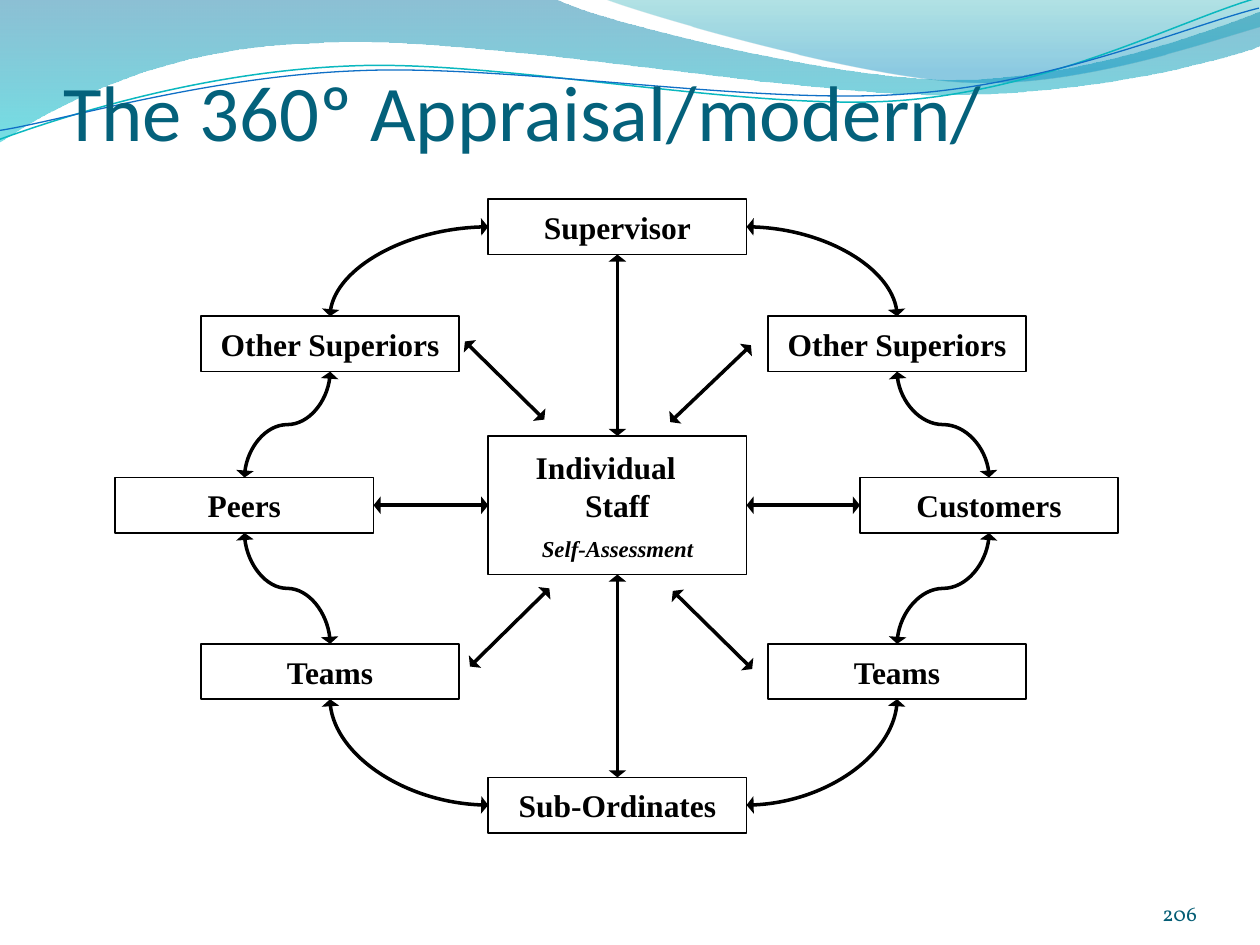
import pptx
import pptx.dml.color
import pptx.enum.shapes
import pptx.enum.text
import pptx.oxml
import pptx.oxml.ns
import pptx.util
from pptx.dml.color import RGBColor
from pptx.enum.shapes import MSO_CONNECTOR, MSO_SHAPE
from pptx.enum.text import MSO_ANCHOR, MSO_AUTO_SIZE, PP_ALIGN
from pptx.util import Inches, Pt

BLACK = RGBColor(0x00, 0x00, 0x00)
TITLE_TEAL = RGBColor(0x04, 0x61, 0x7B)
NUMBER_TEAL = RGBColor(0x04, 0x5D, 0x75)
WAVE_BLUE = RGBColor(0x00, 0x74, 0xA1)
WAVE_CYAN = RGBColor(0x00, 0xC6, 0xCF)
CREST_GREEN = RGBColor(0x00, 0xA1, 0xA9)
CREST_BLUE = RGBColor(0x00, 0x8B, 0xBF)
LINE_CYAN = RGBColor(0x0A, 0xB8, 0xBF)
LINE_BLUE = RGBColor(0x0F, 0x6F, 0xC6)

BOX_WIDTH, BOX_HEIGHT = 2.05, 0.44
CENTER_X, CENTER_Y = 4.9, 4.01
CORE_HEIGHT = 1.1
LEFT_X, RIGHT_X = 2.62, 7.12
PEERS_X, CUSTOMERS_X = 1.94, 7.85
TOP_Y, UPPER_Y, LOWER_Y, BOTTOM_Y = 1.8, 2.73, 5.33, 6.39
WAVE_TILT = 357.3


def make_element(tag, attributes=""):
    return pptx.oxml.parse_xml(f'<{tag} {pptx.oxml.ns.nsdecls("a")} {attributes}/>')


def add_outline(page, start, segments, closed):
    builder = page.shapes.build_freeform(Inches(start[0]), Inches(start[1]))
    points = [(Inches(x), Inches(y)) for segment in segments for x, y in segment]
    builder.add_line_segments(points, close=closed)
    shape = builder.convert_to_shape()
    shape.shadow.inherit = False
    steps = list(shape._element.iter(pptx.oxml.ns.qn("a:lnTo")))
    for segment in segments:
        used, steps = steps[:len(segment)], steps[len(segment):]
        if len(segment) == 3:
            curve = make_element("a:cubicBezTo")
            used[0].addprevious(curve)
            for step in used:
                curve.append(step[0])
                step.getparent().remove(step)
    return shape


def add_wave(page, start, segments, stops):
    shape = add_outline(page, start, segments, True)
    shape.line.fill.background()
    shape.fill.gradient()
    shape.fill.gradient_angle = 270
    for stop, (position, color, opacity) in zip(shape.fill.gradient_stops, stops):
        stop.position = position
        stop.color.rgb = color
        for tint in stop._gs.iter(pptx.oxml.ns.qn("a:srgbClr")):
            tint.append(make_element("a:alpha", f'val="{opacity * 1000}"'))


def add_wave_line(page, start, segments, color, width):
    shape = add_outline(page, start, segments, False)
    shape.rotation = WAVE_TILT
    shape.fill.background()
    shape.line.color.rgb = color
    shape.line.width = Pt(width)


def add_background(page):
    add_wave(page, (0, 0), [
        [(4.4, -0.01)],
        [(4.76, 0.17), (6.64, 0.63), (7.58, 0.63)],
        [(8.53, 0.63), (9.58, 0.26), (10, 0.09)],
        [(10.01, 0.36)],
        [(9.83, 0.44), (8.7, 0.76), (7.46, 0.75)],
        [(6.22, 0.75), (3.82, 0.28), (2.57, 0.34)],
        [(1.29, 0.36), (0.46, 0.83), (-0.01, 1.13)],
    ], [(0, WAVE_BLUE, 45), (1, WAVE_CYAN, 55)])
    add_wave(page, (4.79, -0.01), [
        [(5.09, 0.11), (6.82, 0.62), (7.69, 0.65)],
        [(8.56, 0.69), (9.61, 0.32), (10, 0.21)],
        [(10, 0)],
    ], [(0, CREST_GREEN, 30), (0.8, CREST_BLUE, 45)])
    add_wave_line(page, (-0.02, 0.87), [
        [(0.47, 0.72), (1.58, 0.41), (2.78, 0.42)],
        [(3.96, 0.42), (5.91, 0.93), (7.12, 0.9)],
        [(8.32, 0.87), (9.4, 0.36), (10, 0.22)],
    ], LINE_CYAN, 0.85)
    add_wave_line(page, (-0.02, 0.8), [
        [(0.46, 0.75), (1.64, 0.45), (2.83, 0.46)],
        [(4.04, 0.46), (5.96, 0.88), (7.16, 0.85)],
        [(8.35, 0.83), (9.42, 0.42), (10.01, 0.3)],
    ], LINE_BLUE, 0.75)


def format_text(para, font, size, color, align, bold=False, italic=False):
    para.alignment = align
    for span in para.runs:
        span.font.name = font
        span.font.size = Pt(size)
        span.font.color.rgb = color
        span.font.bold = bold
        span.font.italic = italic


def set_frame(frame, top_inset):
    frame.word_wrap = True
    frame.auto_size = MSO_AUTO_SIZE.NONE
    frame.vertical_anchor = MSO_ANCHOR.BOTTOM
    frame.margin_left = frame.margin_right = frame.margin_bottom = 0
    frame.margin_top = Inches(top_inset)


def add_title(page, text):
    title = page.shapes.title
    title.left, title.top = Inches(0.5), Inches(0.77)
    title.width, title.height = Inches(9.08), Inches(0.48)
    title.text_frame.text = text
    set_frame(title.text_frame, 0.05)
    format_text(title.text_frame.paragraphs[0], "Calibri", 45, TITLE_TEAL, PP_ALIGN.LEFT)
    page.shapes._spTree.append(title._element)


def add_page_number(page, text):
    box = page.shapes.add_textbox(Inches(8.67), Inches(6.95), Inches(0.83), Inches(0.4))
    box.text_frame.text = text
    set_frame(box.text_frame, 0)
    format_text(box.text_frame.paragraphs[0], "Vollkorn", 12, NUMBER_TEAL, PP_ALIGN.RIGHT)


def add_box(page, text, x, y, height=BOX_HEIGHT, note=None):
    box = page.shapes.add_shape(
        MSO_SHAPE.RECTANGLE, Inches(x - BOX_WIDTH / 2), Inches(y - height / 2),
        Inches(BOX_WIDTH), Inches(height))
    box.shadow.inherit = False
    box.fill.background()
    box.line.color.rgb = BLACK
    box.line.width = Pt(1)
    frame = box.text_frame
    frame.word_wrap = True
    frame.vertical_anchor = MSO_ANCHOR.MIDDLE
    frame.text = text
    format_text(frame.paragraphs[0], "Times New Roman", 18, BLACK, PP_ALIGN.CENTER, True)
    if note:
        para = frame.add_paragraph()
        para.text = note
        para.space_before = Pt(6.5)
        format_text(para, "Times New Roman", 13, BLACK, PP_ALIGN.CENTER, True, True)


def add_arrow(page, start, end, kind=MSO_CONNECTOR.STRAIGHT):
    arrow = page.shapes.add_connector(kind, *map(Inches, start + end))
    arrow.line.color.rgb = BLACK
    arrow.line.width = Pt(2)
    line = arrow.line._get_or_add_ln()
    for tag in ("a:headEnd", "a:tailEnd"):
        line.append(make_element(tag, 'type="triangle" w="lg" len="sm"'))
    arrow._element.spPr.append(make_element("a:effectLst"))
    return arrow


def add_arc(page, start, end):
    arc = add_arrow(page, start, end, MSO_CONNECTOR.CURVE)
    arc._element.spPr.find(pptx.oxml.ns.qn("a:prstGeom")).set("prst", "curvedConnector2")


def add_s_curve(page, start, end):
    half_x, half_y = (end[0] - start[0]) / 2, (end[1] - start[1]) / 2
    x, y = start[0] + half_x, start[1] + half_y
    side, angle = (1, 270) if half_x > 0 else (-1, 90)
    curve = add_arrow(
        page, (x + side * half_y, y - side * half_x),
        (x - side * half_y, y + side * half_x), MSO_CONNECTOR.CURVE)
    curve._element.spPr.find(pptx.oxml.ns.qn("a:xfrm")).set("rot", str(angle * 60000))


def add_links(page):
    half_w, half_h, half_core = BOX_WIDTH / 2, BOX_HEIGHT / 2, CORE_HEIGHT / 2
    for side, team_x, outer_x in ((-1, LEFT_X, PEERS_X), (1, RIGHT_X, CUSTOMERS_X)):
        edge = CENTER_X + side * half_w
        add_arc(page, (edge, TOP_Y), (team_x, UPPER_Y - half_h))
        add_arc(page, (edge, BOTTOM_Y), (team_x, LOWER_Y + half_h))
        add_s_curve(page, (team_x, UPPER_Y + half_h), (outer_x, CENTER_Y - half_h))
        add_s_curve(page, (outer_x, CENTER_Y + half_h), (team_x, LOWER_Y - half_h))
        add_arrow(page, (edge, CENTER_Y), (outer_x - side * half_w, CENTER_Y))
    for side, far_y in ((-1, TOP_Y), (1, BOTTOM_Y)):
        add_arrow(page, (CENTER_X, CENTER_Y + side * half_core),
                  (CENTER_X, far_y - side * half_h))
    for start, end in (((4.36, 4.67), (3.73, 5.29)), ((5.96, 2.74), (5.32, 3.35)),
                       ((5.97, 5.31), (5.34, 4.69)), ((4.32, 3.33), (3.69, 2.71))):
        add_arrow(page, start, end)


def main():
    deck = pptx.Presentation()
    deck.slide_width, deck.slide_height = Inches(10), Inches(7.5)
    page = deck.slides.add_slide(deck.slide_layouts[5])
    add_background(page)
    add_title(page, "The 360º Appraisal/modern/")
    add_box(page, "Individual    Staff", CENTER_X, CENTER_Y, CORE_HEIGHT, "Self-Assessment")
    for text, x, y in (
            ("Supervisor", CENTER_X, TOP_Y), ("Other Superiors", LEFT_X, UPPER_Y),
            ("Peers", PEERS_X, CENTER_Y), ("Teams", LEFT_X, LOWER_Y),
            ("Sub-Ordinates", CENTER_X, BOTTOM_Y), ("Teams", RIGHT_X, LOWER_Y),
            ("Customers", CUSTOMERS_X, CENTER_Y), ("Other Superiors", RIGHT_X, UPPER_Y)):
        add_box(page, text, x, y)
    add_links(page)
    add_page_number(page, "206")
    deck.save("out.pptx")


if __name__ == "__main__":
    main()
